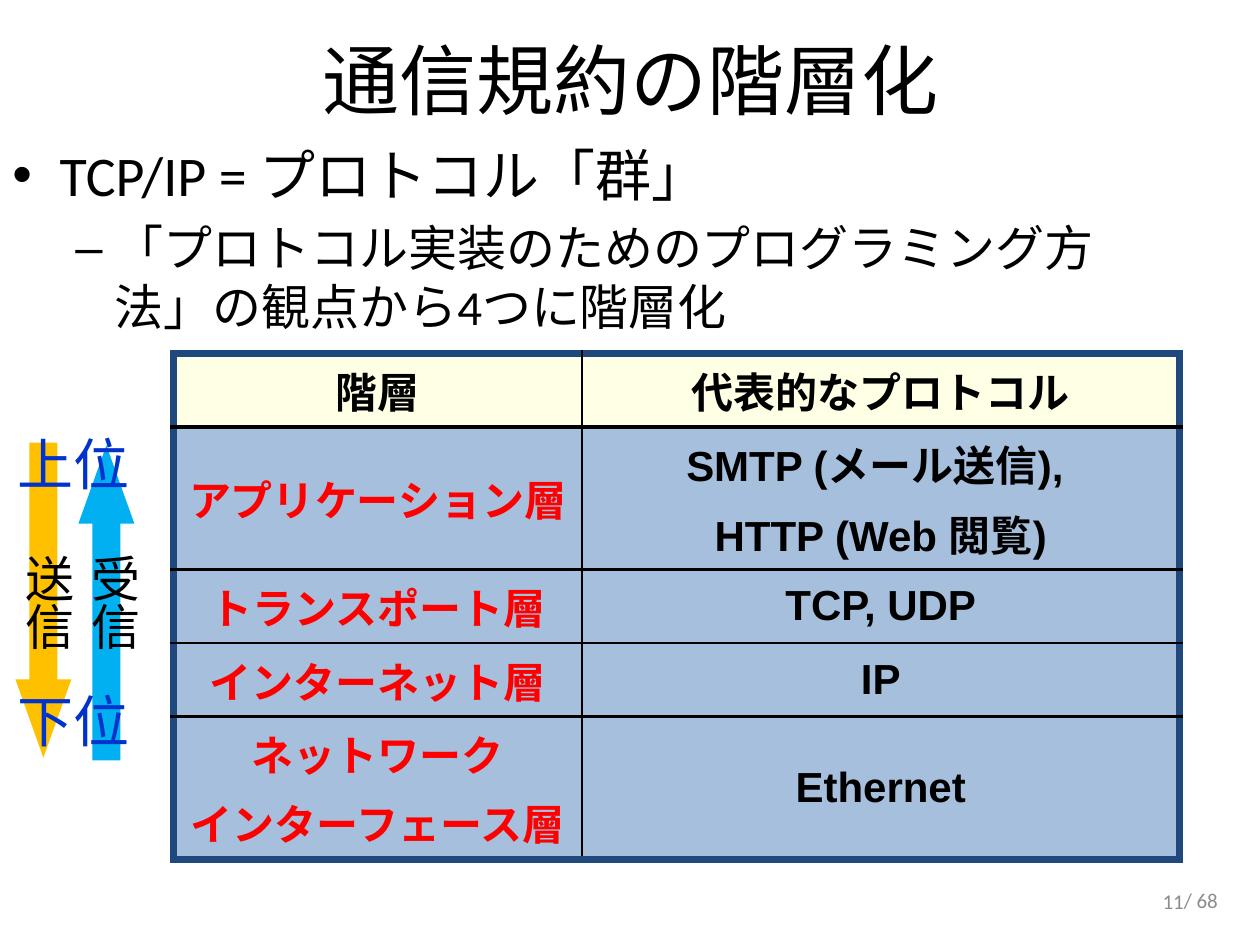
from lxml.etree import SubElement
from pptx import Presentation
from pptx.dml.color import RGBColor
from pptx.enum.shapes import MSO_SHAPE
from pptx.enum.text import MSO_ANCHOR, PP_ALIGN
from pptx.oxml.ns import qn
from pptx.util import Pt

COLORS = {
    "black": "000000", "gray": "8C8C8C", "red": "FF0000", "blue": "0033CC",
    "navy": "1F497D", "cream": "FFFFCC", "steel": "4F81BD",
    "send": "FFC000", "receive": "00B0F0",
}


class SlideBuilder:
    def __init__(self, slide):
        self.slide = slide

    def color(self, name):
        return RGBColor.from_string(COLORS[name])

    def style(self, paragraph, size, font="Calibri", color="black", bold=False, align=None):
        paragraph.font.size = Pt(size)
        paragraph.font.name = font
        paragraph.font.bold = bold
        paragraph.font.color.rgb = self.color(color)
        paragraph.alignment = align

    def title(self, text, left, top, width, height):
        title = self.slide.shapes.title
        title.left, title.top, title.width, title.height = map(Pt, (left, top, width, height))
        title.text_frame.text = text
        title.text_frame.vertical_anchor = MSO_ANCHOR.MIDDLE
        self.style(title.text_frame.paragraphs[0], 44, align=PP_ALIGN.CENTER)

    def text(self, lines, left, top, width, height, vertical=False,
             anchor=MSO_ANCHOR.TOP, **style):
        frame = self.slide.shapes.add_textbox(*map(Pt, (left, top, width, height))).text_frame
        frame.word_wrap = True
        frame.vertical_anchor = anchor
        frame.text = lines
        if vertical:
            frame._txBody.bodyPr.set("vert", "eaVert")
        for paragraph in frame.paragraphs:
            self.style(paragraph, **style)
        return frame

    def bullets(self, items, left, top, width, height):
        frame = self.text("\n".join(item[0] for item in items), left, top, width, height, size=32)
        for paragraph, (_, level, mark, size, margin, hang) in zip(frame.paragraphs, items):
            paragraph.level = level
            paragraph.font.size = Pt(size)
            paragraph.space_before = Pt(size * 0.2)
            properties = paragraph._p.get_or_add_pPr()
            properties.set("marL", str(Pt(margin)))
            properties.set("indent", str(-Pt(hang)))
            defaults = properties.find(qn("a:defRPr"))
            defaults.addprevious(properties.makeelement(qn("a:buFont"), {"typeface": "Arial"}))
            defaults.addprevious(properties.makeelement(qn("a:buChar"), {"char": mark}))

    def arrow(self, kind, color, left, top, width, height):
        arrow = self.slide.shapes.add_shape(kind, *map(Pt, (left, top, width, height)))
        arrow.shadow.inherit = False
        arrow.fill.solid()
        arrow.fill.fore_color.rgb = self.color(color)
        arrow.line.fill.background()
        arrow.adjustments[0], arrow.adjustments[1] = 0.5, 1.4

    def cell(self, cell, text, fill, color, borders):
        cell.vertical_anchor = MSO_ANCHOR.MIDDLE
        cell.text = text
        for paragraph in cell.text_frame.paragraphs:
            self.style(paragraph, 24, "Arial", color, True, PP_ALIGN.CENTER)
            paragraph.space_before = Pt(4.8)
        cell.fill.solid()
        cell.fill.fore_color.rgb = self.color(fill)
        properties = cell._tc.get_or_add_tcPr()
        tint = properties.find(qn("a:solidFill")).find(qn("a:srgbClr"))
        SubElement(tint, qn("a:alpha"), val="50000")
        for position, (side, (line_color, width)) in enumerate(borders.items()):
            line = properties.makeelement(qn(f"a:ln{side}"), {"w": str(Pt(width))})
            line_fill = SubElement(line, qn("a:solidFill"))
            SubElement(line_fill, qn("a:srgbClr"), val=COLORS[line_color])
            properties.insert(position, line)

    def table(self, rows, left, top, widths, heights):
        frame = self.slide.shapes.add_table(
            len(rows), len(widths), Pt(left), Pt(top), Pt(sum(widths)), Pt(sum(heights)))
        table = frame.table
        for column, width in zip(table.columns, widths):
            column.width = Pt(width)
        outer, inner, header_rule = ("navy", 4.5), ("black", 1.5), ("black", 3)
        last_row, last_column = len(rows) - 1, len(widths) - 1
        for r, row in enumerate(rows):
            table.rows[r].height = Pt(heights[r])
            for c, text in enumerate(row):
                borders = {
                    "L": outer if c == 0 else inner,
                    "R": outer if c == last_column else inner,
                    "T": outer if r == 0 else header_rule if r == 1 else inner,
                    "B": outer if r == last_row else header_rule if r == 0 else inner,
                }
                fill = "steel" if r else "cream"
                color = "red" if r and c == 0 else "black"
                self.cell(table.cell(r, c), text, fill, color, borders)


def main():
    presentation = Presentation()
    presentation.slide_width, presentation.slide_height = Pt(720), Pt(540)
    page = SlideBuilder(presentation.slides.add_slide(presentation.slide_layouts[5]))

    # Title and bullets
    page.title("通信規約の階層化", 36.5, 0, 648, 90)
    page.bullets([
        ("TCP/IP = プロトコル「群」", 0, "•", 32, 27, 27),
        ("「プロトコル実装のためのプログラミング方法」の観点から4つに階層化", 1, "–", 28, 58.5, 22.5),
    ], 0, 77, 685, 382)

    # Layers and their protocols
    single, double = 42, 81.5
    page.table([
        ("階層", "代表的なプロトコル"),
        ("アプリケーション層", "SMTP (メール送信), \nHTTP (Web 閲覧)"),
        ("トランスポート層", "TCP, UDP"),
        ("インターネット層", "IP"),
        ("ネットワーク\nインターフェース層", "Ethernet"),
    ], 99, 202, (233.5, 341.5), (single, double, single, single, double))

    # Sending and receiving directions
    page.arrow(MSO_SHAPE.UP_ARROW, "receive", 44.8, 254.5, 32, 180)
    page.arrow(MSO_SHAPE.DOWN_ARROW, "send", 8.8, 253, 32, 180)
    for level, top in (("上位", 242), ("下位", 389)):
        page.text(level, 3, top, 84, 45, size=32, font="Open Sans", color="blue")
    for direction, left in (("送信", 0), ("受信", 37.5)):
        page.text(direction, left, 309.5, 48, 136, vertical=True, size=28, font="Arial")

    # Page number
    for number, left, top in (("/ 68", 535, 499.7), ("11", 515.5, 500.4)):
        page.text(number, left, top, 168, 29, anchor=MSO_ANCHOR.MIDDLE,
                  size=12, color="gray", align=PP_ALIGN.RIGHT)

    presentation.save("out.pptx")


if __name__ == "__main__":
    main()
